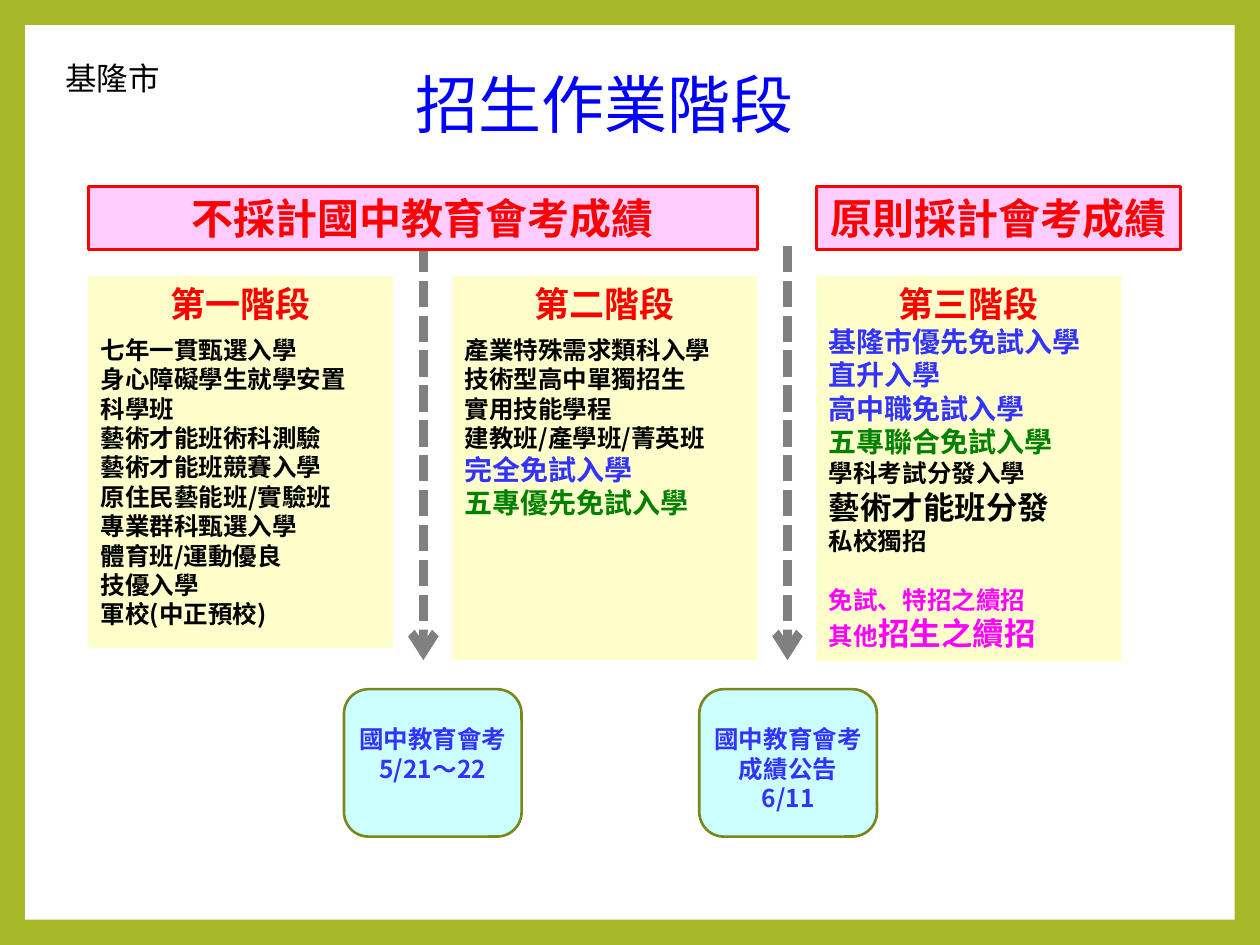
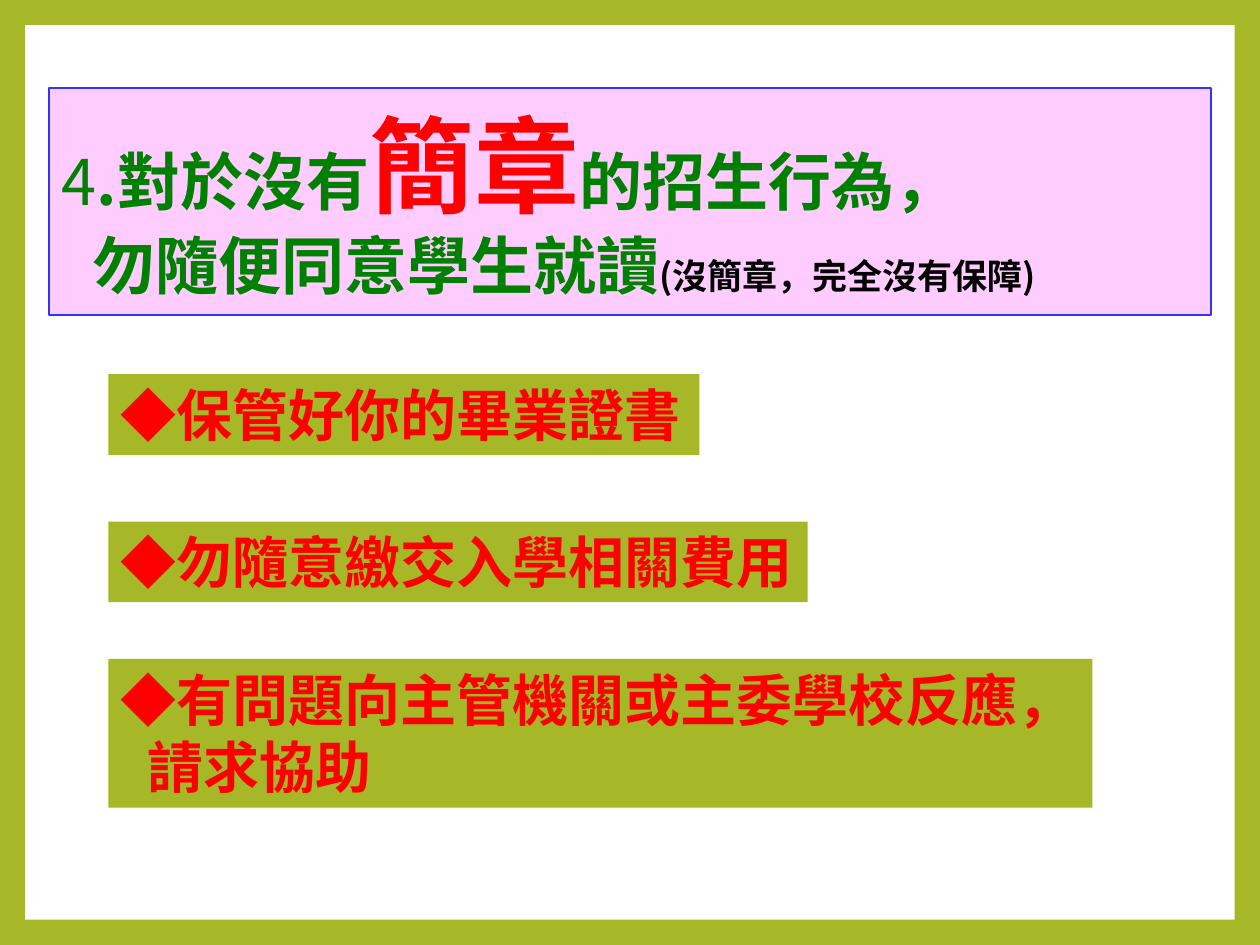
from lxml import etree
from pptx import Presentation
from pptx.dml.color import RGBColor
from pptx.enum.dml import MSO_LINE
from pptx.enum.shapes import MSO_CONNECTOR, MSO_SHAPE
from pptx.enum.text import MSO_ANCHOR, MSO_AUTO_SIZE, PP_ALIGN
from pptx.oxml.ns import qn
from pptx.util import Inches, Pt

RECT, ROUNDED = MSO_SHAPE.RECTANGLE, MSO_SHAPE.ROUNDED_RECTANGLE
STRAIGHT = MSO_CONNECTOR.STRAIGHT
DASH = MSO_LINE.SQUARE_DOT
LEFT, CENTER, JUSTIFY = PP_ALIGN.LEFT, PP_ALIGN.CENTER, PP_ALIGN.JUSTIFY
TOP, MIDDLE = MSO_ANCHOR.TOP, MSO_ANCHOR.MIDDLE
NO_RESIZE = MSO_AUTO_SIZE.NONE
TITLE_ONLY = 5

COLORS = {
    "frame": "A6B727", "page": "FFFFFF", "title": "0000FF", "red": "FF0000",
    "black": "000000", "blue": "3333FF", "green": "008000", "magenta": "FF00FF",
    "pink": "FFCCFF", "cream": "FFFFCC", "aqua": "CCFFFF", "olive": "7B871D",
    "gray": "808080",
}
CJK, CABIN, ARIAL = "Noto Sans CJK SC", "Cabin", "Arial"


def rgb(color):
    return RGBColor.from_string(COLORS[color])


def line(text, size=14, color="black", bold=True, **layout):
    return {"runs": [(text, size, color, bold)], **layout}


def mixed(*runs, **layout):
    return {"runs": runs, **layout}


class Deck:
    def __init__(self):
        self.prs = Presentation()
        self.prs.slide_width, self.prs.slide_height = Inches(10), Inches(7.5)
        background = self.prs.slide_master.background.fill
        background.solid()
        background.fore_color.rgb = rgb("frame")
        self.slide = None

    def new_slide(self):
        self.slide = self.prs.slides.add_slide(self.prs.slide_layouts[TITLE_ONLY])
        page = self.box((0.2, 0.2, 9.6, 7.1), "page")
        self.slide.shapes._spTree.insert(2, page._element)

    def style(self, font, size, color, bold, face):
        font.size, font.bold, font.name = Pt(size), bold, face
        font.color.rgb = rgb(color)
        etree.SubElement(font._rPr, qn("a:ea")).set("typeface", face)

    def paint(self, shape, fill, border=None, weight=1.5):
        shape.fill.solid()
        shape.fill.fore_color.rgb = rgb(fill)
        if border:
            shape.line.color.rgb = rgb(border)
            shape.line.width = Pt(weight)
        else:
            shape.line.fill.background()

    def fill_text(self, shape, lines, align=LEFT, anchor=TOP, face=CJK, inset=0.1):
        frame = shape.text_frame
        frame.word_wrap = True
        frame.auto_size = NO_RESIZE
        frame.vertical_anchor = anchor
        frame.margin_left = frame.margin_right = Inches(inset)
        frame.margin_top = frame.margin_bottom = Inches(0.05)
        for index, content in enumerate(lines):
            paragraph = frame.add_paragraph() if index else frame.paragraphs[0]
            paragraph.alignment = content.get("align", align)
            paragraph.space_before = Pt(content.get("before", 0))
            if "indent" in content:
                properties = paragraph._p.get_or_add_pPr()
                properties.set("marL", str(Inches(content["indent"])))
                properties.set("indent", "0")
            runs = content["runs"]
            for text, *look in runs:
                run = paragraph.add_run()
                run.text = text
                if len(runs) > 1:
                    self.style(run.font, *look, face)
            if len(runs) == 1:
                self.style(paragraph.font, *runs[0][1:], face)

    def title(self, at, lines, **layout):
        title = self.slide.shapes.title
        title.left, title.top, title.width, title.height = map(Inches, at)
        self.fill_text(title, lines, anchor=MIDDLE, **layout)
        return title

    def box(self, at, fill, border=None, lines=(), form=RECT, **layout):
        shape = self.slide.shapes.add_shape(form, *map(Inches, at))
        shape.shadow.inherit = False
        self.paint(shape, fill, border)
        if lines:
            self.fill_text(shape, lines, **layout)
        return shape

    def label(self, at, lines, **layout):
        self.fill_text(self.slide.shapes.add_textbox(*map(Inches, at)), lines, **layout)

    def arrow_down(self, x, top, bottom):
        arrow = self.slide.shapes.add_connector(
            STRAIGHT, Inches(x), Inches(top), Inches(x), Inches(bottom))
        arrow.line.color.rgb = rgb("gray")
        arrow.line.width = Pt(5)
        arrow.line.dash_style = DASH
        etree.SubElement(arrow.line._get_or_add_ln(), qn("a:tailEnd")).set("type", "arrow")
        etree.SubElement(arrow._element.spPr, qn("a:effectLst"))


def build_stages(deck):
    deck.new_slide()
    deck.title((3.2, 0.39, 3.2, 0.86), [line("招生作業階段", 36, "title", False)],
               align=CENTER, inset=0)

    exams = [
        (2.73, 3.36, ["國中教育會考", "5/21～22"]),
        (5.55, 6.25, ["國中教育會考成績公告", "6/11"]),
    ]
    for left, arrow_x, notes in exams:
        deck.box((left, 5.47, 1.41, 1.17), "aqua", "olive", form=ROUNDED)
        deck.label((left, 5.7, 1.41, 0.81),
                   [line(note, color="blue") for note in notes], align=CENTER)
        deck.arrow_down(arrow_x, 1.95, 5.24)

    first_stage = ["身心障礙學生就學安置", "科學班", "藝術才能班術科測驗", "藝術才能班競賽入學",
                   "原住民藝能班/實驗班", "專業群科甄選入學", "體育班/運動優良", "技優入學",
                   "軍校(中正預校)"]
    second_stage = ["技術型高中單獨招生", "實用技能學程", "建教班/產學班/菁英班"]
    third_stage = ["基隆市優先免試入學", "直升入學", "高中職免試入學"]
    stages = [
        ("第一階段", 2.95, [line("七年一貫甄選入學", before=6), *map(line, first_stage)]),
        ("第二階段", 3.05, [
            line("產業特殊需求類科入學", before=6), *map(line, second_stage),
            line("完全免試入學", 16, "blue"),
            line("五專優先免試入學", 16, "green")]),
        ("第三階段", 3.06, [
            *[line(text, 16, "blue") for text in third_stage],
            line("五專聯合免試入學", 16, "green"),
            line("學科考試分發入學"),
            line("藝術才能班分發", 18),
            line("私校獨招"),
            line("免試、特招之續招", color="magenta", before=17),
            mixed(("其他", 14, "magenta", True), ("招生之續招", 18, "magenta", True))]),
    ]
    for index, (heading, height, entries) in enumerate(stages):
        deck.box((0.7 + 2.89 * index, 2.19, 2.42, height), "cream",
                 lines=[line(heading, 20, "red", align=CENTER), *entries])

    for left, width, rule in [(0.7, 5.31, "不採計國中教育會考成績"),
                              (6.48, 2.89, "原則採計會考成績")]:
        deck.box((left, 1.48, width, 0.5), "pink", "red",
                 [line(rule, 24, "red")], align=CENTER)
    deck.label((0.42, 0.42, 1.5, 0.4), [line("基隆市", 18, bold=False)], face=CABIN)


def build_advice(deck):
    deck.new_slide()
    warning = deck.title((0.39, 0.7, 9.22, 1.8), [
        mixed(("4", 36, "green", False), (".對於沒有", 36, "green", True),
              ("簡章", 60, "red", True), ("的招生行為，", 36, "green", True)),
        mixed(("勿隨便同意學生就讀", 36, "green", True),
              ("(沒簡章，完全沒有保障)", 20, "black", True), indent=0.24),
    ])
    deck.paint(warning, "pink", "blue", 1)

    reminders = [
        (2.97, 4.69, 0.64, [line("◆保管好你的畢業證書", 32, "red")]),
        (4.14, 5.55, 0.64, [line("◆勿隨意繳交入學相關費用", 32, "red")]),
        (5.23, 7.81, 1.18, [line("◆有問題向主管機關或主委學校反應，", 32, "red"),
                            line("請求協助", 32, "red", indent=0.21)]),
    ]
    for top, width, height, lines in reminders:
        deck.box((0.86, top, width, height), "frame", lines=lines,
                 align=JUSTIFY, face=ARIAL)


def main():
    deck = Deck()
    build_stages(deck)
    build_advice(deck)
    deck.prs.save("out.pptx")


if __name__ == "__main__":
    main()
